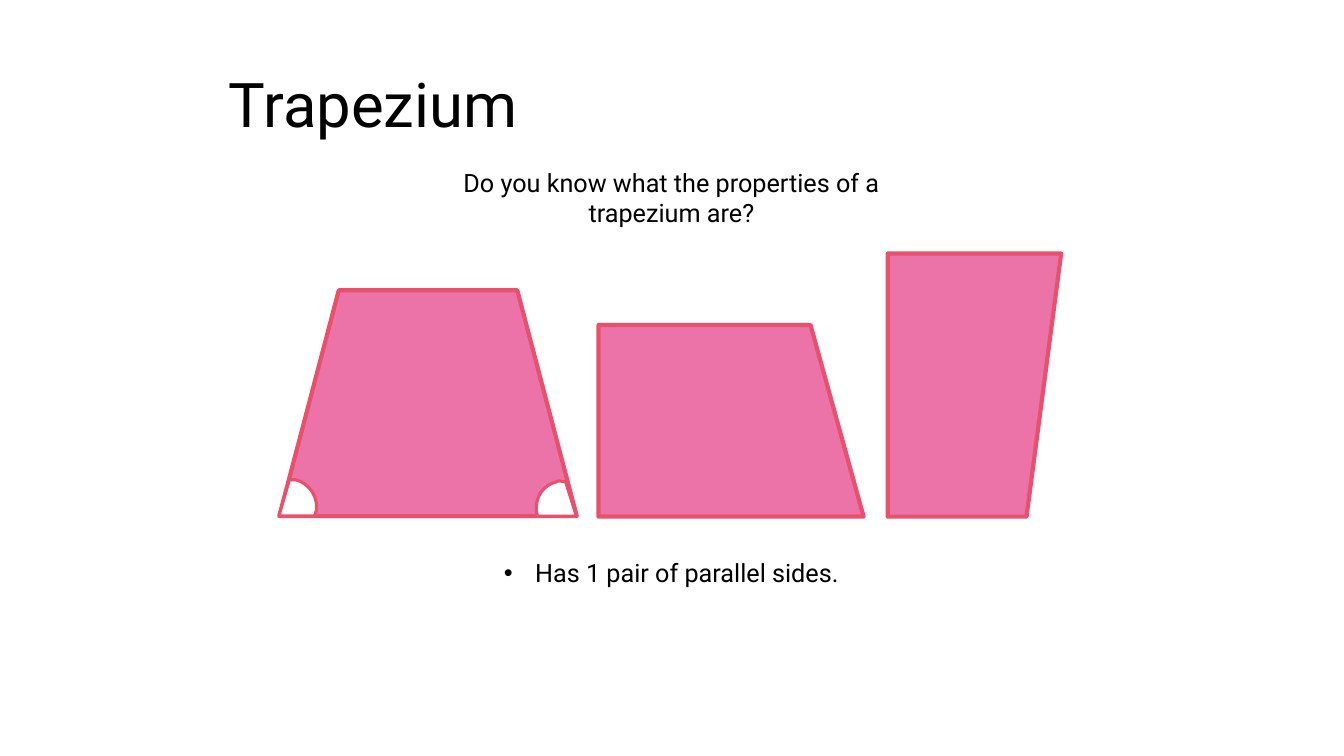
from pptx import Presentation
from pptx.dml.color import RGBColor
from pptx.enum.shapes import MSO_SHAPE as Preset
from pptx.enum.text import MSO_ANCHOR as Anchor, MSO_AUTO_SIZE as AutoSize, PP_ALIGN as Align
from pptx.oxml.ns import qn
from pptx.util import Emu, Pt
from lxml.etree import SubElement

PX = 9144
FONT = "Roboto"
BLACK, WHITE, PINK, RED = "000000", "FFFFFF", "EC73A8", "E9506C"

TITLE = ("Trapezium", (217, 52, 899, 109))
QUESTION = ("Do you know what the properties of a trapezium are?", (416, 161, 500, 71))
PROPERTY = ("Has 1 pair of parallel sides.", (490, 548, 353, 40))

TRAPEZIUMS = [
    (Preset.FLOWCHART_MANUAL_OPERATION, (277, 288, 295, 224), 180, False),
    (Preset.FLOWCHART_MANUAL_INPUT, (630, 286, 190, 263), 90, False),
    (Preset.FLOWCHART_MANUAL_INPUT, (836, 296, 261, 172), 90, True),
]
ANGLES = [
    {"corner": [(312, 512), (278, 512), (277, 511), (287, 476), (292, 476)],
     "arc": [(293, 476), (305, 479), (314, 490), (314, 503)],
     "end": [(314, 506)]},
    {"corner": [(561, 478), (571, 510), (570, 512), (533, 512), (532, 507)],
     "arc": [(532, 506), (531, 493), (539, 481), (552, 478)],
     "end": [(554, 477)]},
]
ARC_STEPS = 16


def color(value):
    return RGBColor.from_string(value)


def emu(lengths):
    return [Emu(round(length * PX)) for length in lengths]


def style_paragraph(paragraph, size):
    paragraph.font.name = FONT
    paragraph.font.size = Pt(size)
    paragraph.font.color.rgb = color(BLACK)


def style_shape(shape, fill, line_width):
    shape.shadow.inherit = False
    shape.fill.solid()
    shape.fill.fore_color.rgb = color(fill)
    shape.line.color.rgb = color(RED)
    shape.line.width = Pt(line_width)


def add_title(slide):
    text, box = TITLE
    title = slide.shapes.title
    title.left, title.top, title.width, title.height = emu(box)
    frame = title.text_frame
    frame.text = text
    frame.auto_size = AutoSize.NONE
    frame.vertical_anchor = Anchor.MIDDLE
    paragraph = frame.paragraphs[0]
    paragraph.alignment = Align.LEFT
    paragraph.line_spacing = 0.9
    style_paragraph(paragraph, 44)


def add_text(slide, content, wrap, alignment, bullet=False):
    text, box = content
    frame = slide.shapes.add_textbox(*emu(box)).text_frame
    frame.word_wrap = wrap
    frame.auto_size = AutoSize.SHAPE_TO_FIT_TEXT
    paragraph = frame.paragraphs[0]
    paragraph.text = text
    paragraph.alignment = alignment
    if bullet:
        properties = paragraph._p.get_or_add_pPr()
        indent = 31 * PX
        properties.set("marL", str(indent))
        properties.set("indent", str(-indent))
        SubElement(properties, qn("a:buFont"), typeface="Arial")
        SubElement(properties, qn("a:buChar"), char="•")
    style_paragraph(paragraph, 18)


def add_trapezium(slide, preset, box, rotation, flipped):
    shape = slide.shapes.add_shape(preset, *emu(box))
    shape.rotation = rotation
    if flipped:
        shape._element.spPr.find(qn("a:xfrm")).set("flipH", "1")
    style_shape(shape, PINK, 3)


def arc_points(controls):
    points = []
    for step in range(ARC_STEPS + 1):
        t = step / ARC_STEPS
        weights = ((1 - t) ** 3, 3 * t * (1 - t) ** 2, 3 * t * t * (1 - t), t ** 3)
        points.append([sum(w * c for w, c in zip(weights, axis)) for axis in zip(*controls)])
    return points


def add_angle(slide, corner, arc, end):
    points = [emu(point) for point in corner + arc_points(arc) + end]
    builder = slide.shapes.build_freeform(*points[0])
    builder.add_line_segments(points[1:], close=True)
    style_shape(builder.convert_to_shape(), WHITE, 2.25)


def main():
    """Build the trapezium slide and save it."""
    presentation = Presentation()
    presentation.slide_width, presentation.slide_height = emu((1333, 750))
    slide = presentation.slides.add_slide(presentation.slide_layouts[5])
    add_title(slide)
    add_text(slide, QUESTION, True, Align.CENTER)
    for trapezium in TRAPEZIUMS:
        add_trapezium(slide, *trapezium)
    add_text(slide, PROPERTY, False, Align.LEFT, bullet=True)
    for angle in ANGLES:
        add_angle(slide, **angle)
    presentation.save("out.pptx")


if __name__ == "__main__":
    main()
